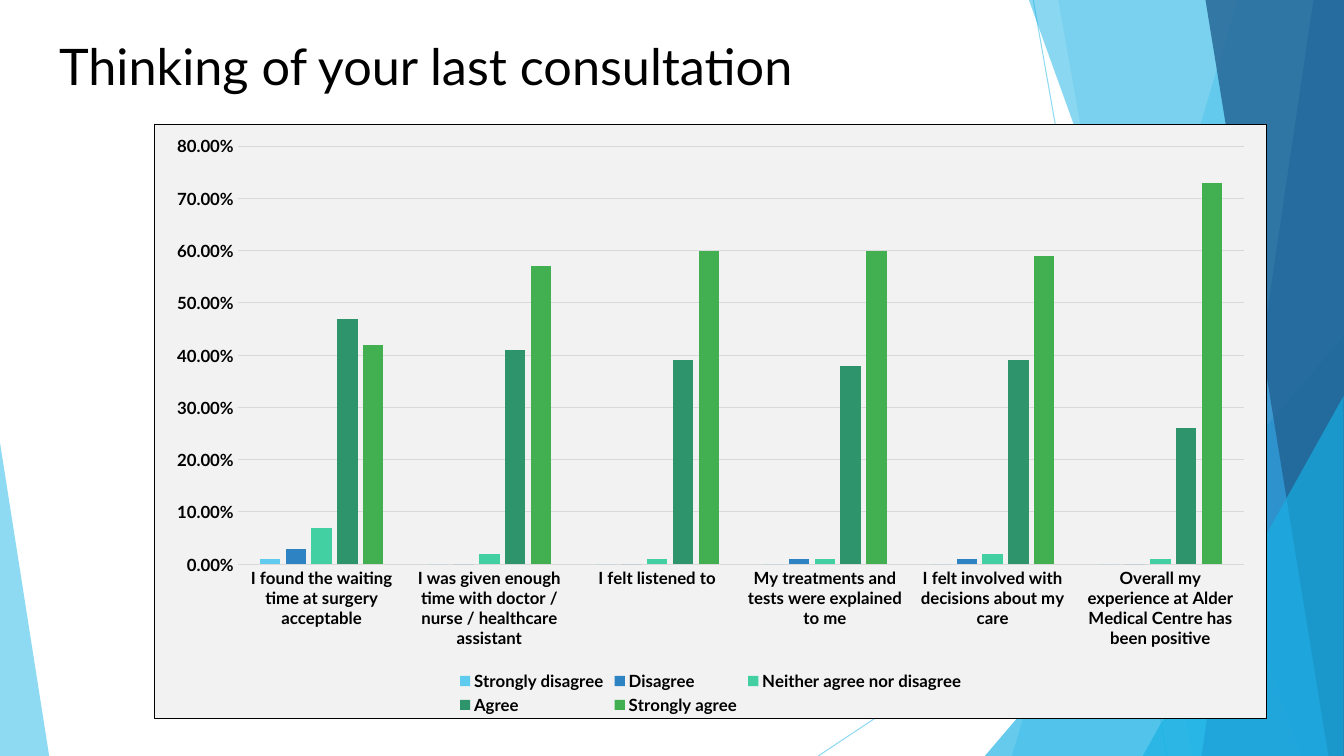
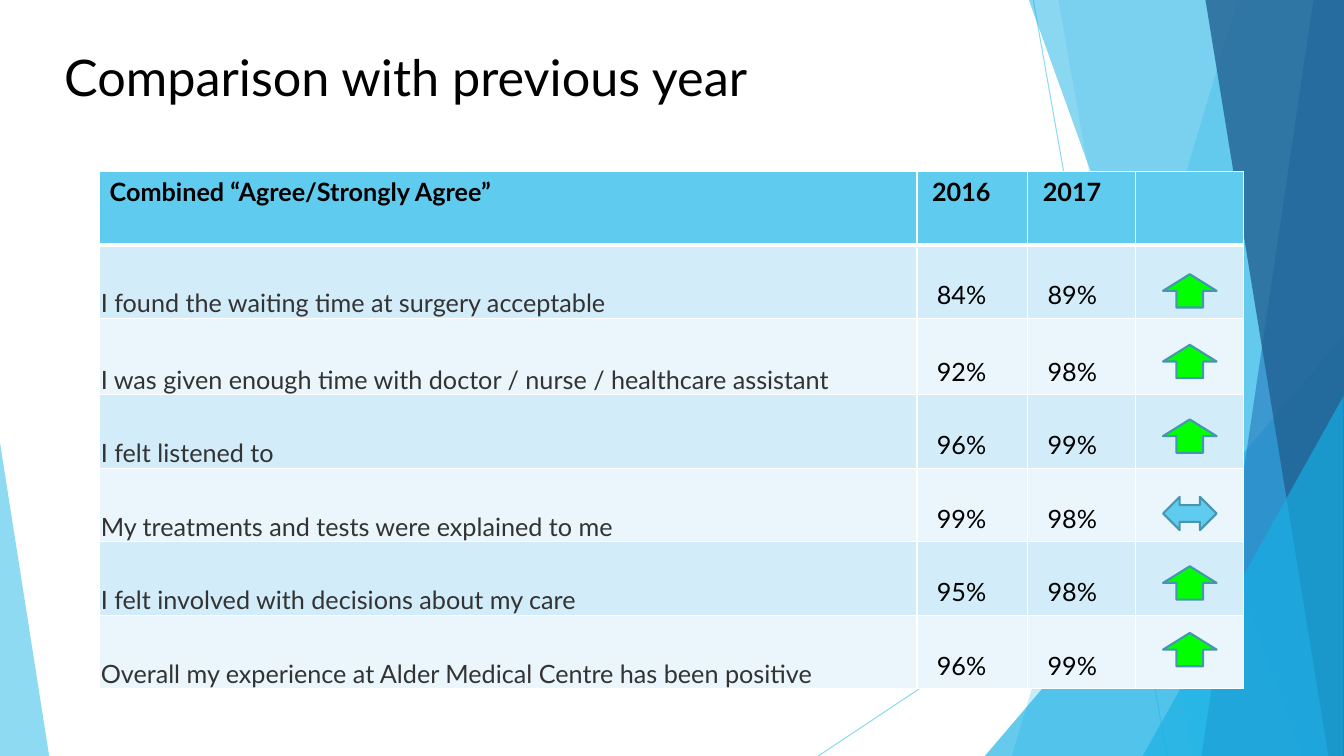
from dataclasses import dataclass
from typing import Any, NamedTuple

from lxml.etree import SubElement
from pptx import Presentation
from pptx.chart.data import CategoryChartData as Data
from pptx.dml.color import RGBColor as Rgb
from pptx.enum.chart import XL_CHART_TYPE as Kind, XL_LEGEND_POSITION as Place, XL_TICK_MARK as Tick
from pptx.enum.shapes import MSO_CONNECTOR as Wire, MSO_SHAPE as Form
from pptx.enum.text import MSO_ANCHOR as Anchor
from pptx.oxml import parse_xml
from pptx.oxml.ns import nsdecls, qn
from pptx.util import Cm, Pt


@dataclass(frozen=True)
class Theme:
    font: str = "Lato"
    black: str = "000000"
    white: str = "FFFFFF"
    gray: str = "333333"
    grid: str = "D9D9D9"
    plot: str = "F2F2F2"
    sky: str = "5FCBEF"
    aqua: str = "17B0E4"
    blue: str = "2E83C3"
    navy: str = "226292"
    mint: str = "42D0A2"
    teal: str = "2E946B"
    leaf: str = "42B051"
    lime: str = "00FF00"
    edge: str = "4696B1"
    bands: tuple[str, str] = ("EAF6FC", "D2ECF9")
    title: int = 36
    body: int = 18
    label: int = 12


class Ray(NamedTuple):
    x1: float
    y1: float
    x2: float
    y2: float


class Panel(NamedTuple):
    """Band from its left edge (top x, base x) to the right of the slide."""
    top: float
    base: float
    color: str
    alpha: int


class Wedge(NamedTuple):
    x: float
    y: float
    wide: float
    high: float
    apex: int
    color: str
    alpha: int


class Row(NamedTuple):
    text: str
    old: str
    new: str
    mark: float
    same: bool = False


class Series(NamedTuple):
    name: str
    color: str
    values: tuple[float, ...]


T = Theme()
WIDE, HIGH = 33.87, 19.05

RAYS = [Ray(26.04, 0, 29.41, HIGH), Ray(WIDE, 10.24, 20.62, HIGH)]
DECOR = [
    Panel(31.19, 25.5, T.sky, 36),
    Panel(26.67, 30.05, T.sky, 20),
    Wedge(24.82, 8.46, 9.04, 10.59, 1, T.aqua, 66),
    Panel(25.93, 32.79, T.aqua, 50),
    Panel(33.1, 30.28, T.blue, 70),
    Panel(30.38, 33.48, T.navy, 80),
    Wedge(28.8, 9.98, 5.06, 9.07, 1, T.aqua, 66),
    Wedge(0, 11.15, 1.24, 7.9, 0, T.sky, 70),
]
ROWS = [
    Row("I found the waiting time at surgery acceptable", "84%", "89%", 6.91),
    Row("I was given enough time with doctor / nurse / healthcare assistant", "92%", "98%", 8.69),
    Row("I felt listened to", "96%", "99%", 10.57),
    Row("My treatments and tests were explained to me", "99%", "98%", 12.52, True),
    Row("I felt involved with decisions about my care", "95%", "98%", 14.27),
    Row("Overall my experience at Alder Medical Centre has been positive", "96%", "99%", 15.95),
]
SERIES = [
    Series("Strongly disagree", T.sky, (0.01, 0, 0, 0, 0, 0)),
    Series("Disagree", T.blue, (0.03, 0, 0, 0.01, 0.01, 0)),
    Series("Neither agree nor disagree", T.mint, (0.07, 0.02, 0.01, 0.01, 0.02, 0.01)),
    Series("Agree", T.teal, (0.47, 0.41, 0.39, 0.38, 0.39, 0.26)),
    Series("Strongly agree", T.leaf, (0.42, 0.57, 0.6, 0.6, 0.59, 0.73)),
]


def apply(item: Any, **values: Any) -> None:
    for name, value in values.items():
        setattr(item, name, value)


def style(font: Any, size: int, color: str = T.black, bold: bool = False) -> None:
    apply(font, name=T.font, size=Pt(size), bold=bold)
    font.color.rgb = Rgb.from_string(color)


def paint(fill: Any, color: str) -> None:
    fill.solid()
    fill.fore_color.rgb = Rgb.from_string(color)


def stroke(line: Any, color: str, width: float) -> None:
    paint(line.fill, color)
    line.width = Pt(width)


def fade(shape: Any, alpha: int) -> None:
    """Make every colour of the shape translucent."""
    for color in shape.element.iter(qn("a:srgbClr")):
        SubElement(color, qn("a:alpha"), val=str(alpha * 1000))


def add_ray(slide: Any, ray: Ray) -> None:
    line = slide.shapes.add_connector(Wire.STRAIGHT, *map(Cm, ray))
    stroke(line.line, T.sky, 0.75)
    fade(line, 70)
    SubElement(line.element.spPr, qn("a:effectLst"))


def add_decor(slide: Any, part: Panel | Wedge) -> None:
    if isinstance(part, Panel):
        pen = slide.shapes.build_freeform(Cm(part.top), Cm(0), scale=1.0)
        ends = [(WIDE, 0), (WIDE, HIGH), (part.base, HIGH)]
        pen.add_line_segments([(Cm(x), Cm(y)) for x, y in ends], close=True)
        shape = pen.convert_to_shape()
    else:
        shape = slide.shapes.add_shape(Form.ISOSCELES_TRIANGLE, *map(Cm, part[:4]))
        shape.adjustments[0] = part.apex
    paint(shape.fill, part.color)
    shape.line.fill.background()
    shape.shadow.inherit = False
    fade(shape, part.alpha)


def add_slide(deck: Any, title: str, x: float, y: float) -> Any:
    slide = deck.slides.add_slide(deck.slide_layouts[6])
    for ray in RAYS:
        add_ray(slide, ray)
    for part in DECOR:
        add_decor(slide, part)
    frame = slide.shapes.add_textbox(Cm(x), Cm(y), Cm(23.88), Cm(2)).text_frame
    apply(frame, word_wrap=True, vertical_anchor=Anchor.TOP, text=title)
    style(frame.paragraphs[0].runs[0].font, T.title)
    return slide


def add_graph(slide: Any) -> None:
    data = Data(number_format="0.00%")
    data.categories = [row.text for row in ROWS]
    for item in SERIES:
        data.add_series(item.name, item.values)
    box = map(Cm, (3.89, 3.12, 28.04, 15.01))
    chart = slide.shapes.add_chart(Kind.COLUMN_CLUSTERED, *box, data).chart
    apply(chart, has_title=False, has_legend=True)
    style(chart.font, T.label, bold=True)
    apply(chart.legend, position=Place.BOTTOM, include_in_layout=False)

    plot = chart.plots[0]
    apply(plot, gap_width=219, overlap=-27, vary_by_categories=False)
    for bar, item in zip(plot.series, SERIES):
        paint(bar.format.fill, item.color)

    base, scale = chart.category_axis, chart.value_axis
    apply(scale, minimum_scale=0, maximum_scale=0.8, major_unit=0.1, has_major_gridlines=True)
    apply(scale.tick_labels, number_format="0.00%", number_format_is_linked=False)
    for axis in (base, scale):
        apply(axis, major_tick_mark=Tick.NONE, minor_tick_mark=Tick.NONE)
        style(axis.tick_labels.font, T.label, bold=True)
    stroke(base.format.line, T.grid, 0.75)
    stroke(scale.major_gridlines.format.line, T.grid, 0.75)
    scale.format.line.fill.background()

    frame = parse_xml(
        f'<c:spPr {nsdecls("c", "a")}>'
        f'<a:solidFill><a:srgbClr val="{T.plot}"/></a:solidFill>'
        f'<a:ln w="{Pt(0.75)}"><a:solidFill><a:srgbClr val="{T.black}"/></a:solidFill></a:ln>'
        "</c:spPr>"
    )
    chart.element.find(qn("c:chart")).addnext(frame)


def edge(cell: Any, row: int) -> None:
    """Draw white borders, thick between the header and the body."""
    widths = {"L": 1, "R": 1, "T": 3 if row == 1 else 1, "B": 3 if row == 0 else 1}
    props = cell._tc.get_or_add_tcPr()
    for spot, (side, width) in enumerate(widths.items()):
        props.insert(spot, parse_xml(
            f'<a:ln{side} {nsdecls("a")} w="{Pt(width)}"><a:solidFill>'
            f'<a:srgbClr val="{T.white}"/></a:solidFill></a:ln{side}>'
        ))


def add_grid(slide: Any) -> None:
    lines = [("Combined “Agree/Strongly Agree”", "2016", "2017", "")]
    lines += [(row.text, row.old, row.new, "") for row in ROWS]
    widths = [20.6, 2.79, 2.72, 2.72]
    heights = [1.85, 1.85, 1.93] + [1.85] * 4
    box = map(Cm, (2.51, 4.32, sum(widths), sum(heights)))
    table = slide.shapes.add_table(len(lines), len(widths), *box).table
    for col, width in zip(table.columns, widths):
        col.width = Cm(width)
    for line, height in zip(table.rows, heights):
        line.height = Cm(height)

    for r, texts in enumerate(lines):
        for c, text in enumerate(texts):
            cell = table.cell(r, c)
            paint(cell.fill, T.bands[r % 2] if r else T.sky)
            edge(cell, r)
            cell.text = text
            label = r > 0 and c == 0
            style(cell.text_frame.paragraphs[0].font, T.body,
                  T.gray if label else T.black, bold=r == 0)
            cell.vertical_anchor = Anchor.BOTTOM if r else Anchor.TOP
            if label:
                apply(cell, margin_left=Cm(0.03), margin_right=Cm(0.03),
                      margin_top=Cm(0.03), margin_bottom=Cm(0))
            elif c:
                apply(cell, margin_left=Cm(0.5 if r else 0.38), margin_right=Cm(0.1),
                      margin_bottom=Cm(0.2))


def add_mark(slide: Any, row: Row) -> None:
    form, color = (Form.LEFT_RIGHT_ARROW, T.sky) if row.same else (Form.UP_ARROW, T.lime)
    mark = slide.shapes.add_shape(form, *map(Cm, (29.31, row.mark, 1.35, 0.84)))
    paint(mark.fill, color)
    stroke(mark.line, T.edge, 1.5)
    mark.shadow.inherit = False


def main() -> None:
    deck = Presentation()
    apply(deck, slide_width=Cm(WIDE), slide_height=Cm(HIGH))
    add_graph(add_slide(deck, "Thinking of your last consultation", 1.24, 0.76))
    slide = add_slide(deck, "Comparison with previous year", 1.37, 1.04)
    add_grid(slide)
    for row in ROWS:
        add_mark(slide, row)
    deck.save("out.pptx")


if __name__ == "__main__":
    main()
